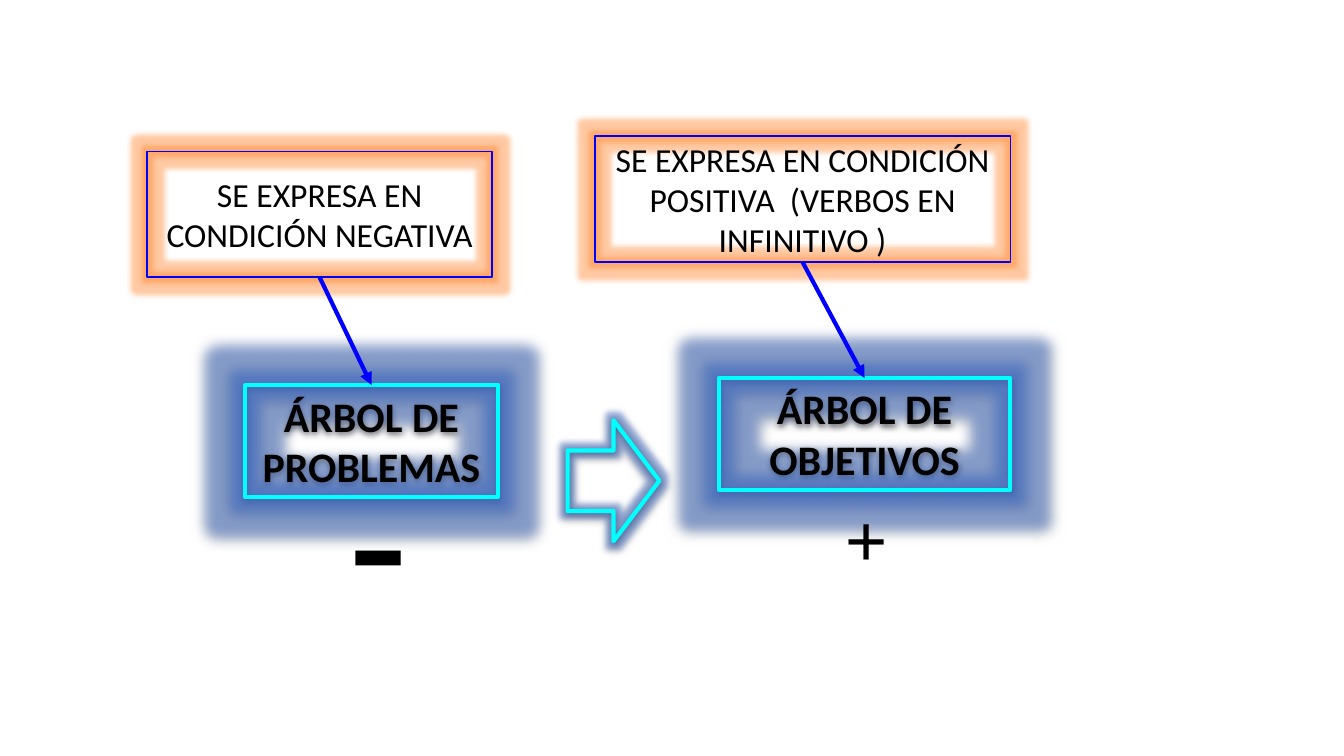
from lxml import etree
from pptx import Presentation
from pptx.dml.color import RGBColor
from pptx.enum.shapes import MSO_CONNECTOR, MSO_SHAPE
from pptx.enum.text import MSO_ANCHOR, MSO_AUTO_SIZE, PP_ALIGN
from pptx.oxml.ns import qn
from pptx.util import Inches, Pt

COLOURS = {
    "text": "000000",
    "cyan": "00FFFF",
    "blue": "0000FF",
    "blue_glow": "2F66D5",
    "orange_glow": "FF7A1A",
    "shadow": "000000",
}


def rgb(name):
    return RGBColor.from_string(COLOURS[name])


def add_effect(effects, tag, colour, alpha, **attributes):
    effect = etree.SubElement(effects, qn(tag), attributes)
    tint = etree.SubElement(effect, qn("a:srgbClr"), val=COLOURS[colour])
    etree.SubElement(tint, qn("a:alpha"), val=str(alpha * 1000))


def add_outline(page, kind, area, line, width, glow, radius, shadow=False):
    """Add an unfilled shape with a glowing border and, if asked, a shadow."""
    shape = page.shapes.add_shape(kind, *map(Inches, area))
    shape.shadow.inherit = False
    shape.fill.background()
    shape.line.color.rgb = rgb(line)
    shape.line.width = Pt(width)
    effects = shape._element.spPr.find(qn("a:effectLst"))
    add_effect(effects, "a:glow", glow, 40, rad=str(Pt(radius)))
    if shadow:
        add_effect(effects, "a:outerShdw", "shadow", 63, blurRad=str(Pt(4.5)),
                   dist=str(Pt(1.5)), dir="5400000", rotWithShape="0")
    return shape


def write(box, text, size, font, bold, align=PP_ALIGN.CENTER):
    para = box.text_frame.paragraphs[0]
    para.text = text
    para.alignment = align
    para.font.size = Pt(size)
    para.font.name = font
    para.font.bold = bold
    para.font.color.rgb = rgb("text")


def add_tree(page, area, text):
    box = add_outline(page, MSO_SHAPE.RECTANGLE, area, "cyan", 3, "blue_glow", 18, True)
    box.text_frame.word_wrap = True
    box.text_frame.auto_size = MSO_AUTO_SIZE.SHAPE_TO_FIT_TEXT
    box.text_frame.vertical_anchor = MSO_ANCHOR.TOP
    write(box, text, 30, "Calibri", True)


def add_note(page, area, text):
    box = add_outline(page, MSO_SHAPE.RECTANGLE, area, "blue", 1, "orange_glow", 8)
    box.text_frame.word_wrap = True
    box.text_frame.vertical_anchor = MSO_ANCHOR.MIDDLE
    write(box, text, 24, "Calibri", False)


def add_sign(page, area, sign, size):
    box = page.shapes.add_textbox(*map(Inches, area))
    box.text_frame.word_wrap = False
    box.text_frame.auto_size = MSO_AUTO_SIZE.SHAPE_TO_FIT_TEXT
    write(box, sign, size, "Times New Roman", True, PP_ALIGN.LEFT)


def add_link(page, note, tree):
    """Draw an arrow from the bottom centre of a note to the top centre of a tree."""
    start = (note[0] + note[2] / 2, note[1] + note[3])
    end = (tree[0] + tree[2] / 2, tree[1])
    link = page.shapes.add_connector(MSO_CONNECTOR.STRAIGHT, *map(Inches, start + end))
    link.line.color.rgb = rgb("blue")
    link.line.width = Pt(3)
    etree.SubElement(link.line._get_or_add_ln(), qn("a:tailEnd"), type="triangle")
    etree.SubElement(link._element.spPr, qn("a:effectLst"))


def main():
    deck = Presentation()
    deck.slide_width, deck.slide_height = Inches(13.33), Inches(7.5)
    page = deck.slides.add_slide(deck.slide_layouts[6])

    problems, objectives = (2.43, 3.82, 2.51, 1.11), (7.13, 3.75, 2.89, 1.11)
    negative, positive = (1.46, 1.5, 3.42, 1.25), (5.9, 1.35, 4.12, 1.25)

    add_tree(page, problems, "ÁRBOL DE PROBLEMAS")
    add_tree(page, objectives, "ÁRBOL DE OBJETIVOS")
    add_sign(page, (3.37, 4.17, 0.78, 2.2), "-", 124.5)
    add_sign(page, (8.28, 4.83, 0.63, 1.01), "+", 54)
    add_outline(page, MSO_SHAPE.RIGHT_ARROW, (5.63, 4.17, 0.91, 1.2),
                "cyan", 3, "blue_glow", 8, True)
    add_note(page, negative, "SE EXPRESA EN CONDICIÓN NEGATIVA")
    add_link(page, negative, problems)
    add_note(page, positive, "SE EXPRESA EN CONDICIÓN POSITIVA  (VERBOS EN INFINITIVO )")
    add_link(page, positive, objectives)
    deck.save("out.pptx")


if __name__ == "__main__":
    main()
